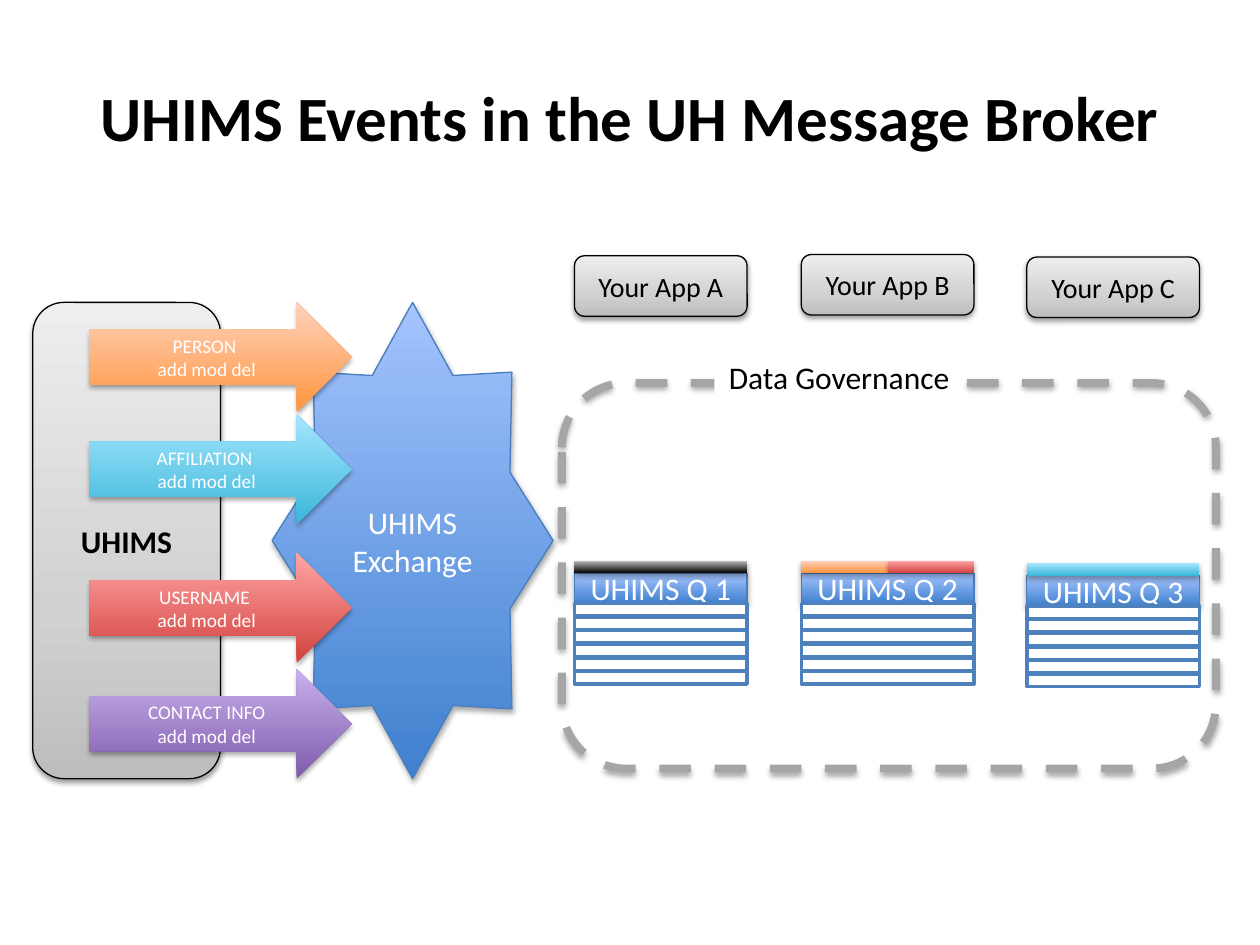
from dataclasses import dataclass

from pptx import Presentation
from pptx.dml.color import RGBColor
from pptx.enum.dml import MSO_LINE
from pptx.enum.shapes import MSO_SHAPE
from pptx.enum.text import MSO_ANCHOR, MSO_AUTO_SIZE, PP_ALIGN
from pptx.oxml import parse_xml
from pptx.oxml.ns import nsdecls, qn
from pptx.util import Inches, Pt

RECT, ROUND = MSO_SHAPE.RECTANGLE, MSO_SHAPE.ROUNDED_RECTANGLE
STAR, ARROW = MSO_SHAPE.STAR_8_POINT, MSO_SHAPE.RIGHT_ARROW
DASH = MSO_LINE.DASH
MIDDLE, TOP = MSO_ANCHOR.MIDDLE, MSO_ANCHOR.TOP
CENTER = PP_ALIGN.CENTER
GROW = MSO_AUTO_SIZE.SHAPE_TO_FIT_TEXT

Stops = tuple[tuple[int, str], ...]
Box = tuple[float, float, float, float]


@dataclass(frozen=True)
class Theme:
    font: str = "Calibri"
    black: str = "000000"
    white: str = "FFFFFF"
    edge: str = "4B7EBC"
    row: str = "4F81BD"
    dash: str = "A6A6A6"
    blue: Stops = ((0, "3F80CE"), (100, "A4C4FF"))
    gray: Stops = ((0, "BDBDBD"), (35, "D1D1D1"), (100, "EEEEEE"))
    dark: Stops = ((0, "000000"), (100, "BDBDBD"))
    orange: Stops = ((0, "FF953E"), (100, "FFD2BD"))
    aqua: Stops = ((0, "39B7D8"), (100, "A7E6FF"))
    red: Stops = ((0, "D1403C"), (100, "FFA6A5"))
    violet: Stops = ((0, "7F5BAB"), (100, "C8B0ED"))
    title: int = 36
    body: int = 18
    app: int = 16
    event: int = 11


@dataclass(frozen=True)
class Event:
    name: str
    top: float
    fill: Stops


@dataclass(frozen=True)
class App:
    name: str
    queue: str
    left: float
    top: float
    head: float
    bands: tuple[Stops, ...]


T = Theme()
EVENTS = (
    Event("PERSON ", 2.4, T.orange),
    Event("AFFILIATION ", 3.29, T.aqua),
    Event("USERNAME ", 4.39, T.red),
    Event("CONTACT INFO", 5.31, T.violet),
)
APPS = (
    App("Your App B", "UHIMS Q 2", 6.36, 2.02, 4.55, (T.orange, T.red)),
    App("Your App A", "UHIMS Q 1", 4.56, 2.03, 4.55, (T.dark,)),
    App("Your App C", "UHIMS Q 3", 8.15, 2.04, 4.57, (T.aqua,)),
)
WIDE, THIN, HEAD = 1.37, 0.1, 0.24
ROWS, STEP = 6, 0.54 / 5


def shade(shape, alpha: int = 35, dist: float = 1.8) -> None:
    """Add a soft shadow that falls straight down."""
    shape.shadow.inherit = False
    effects = shape._element.spPr.find(qn("a:effectLst"))
    effects.append(parse_xml(
        f'<a:outerShdw {nsdecls("a")} blurRad="{Pt(3.1)}" dist="{Pt(dist)}" '
        f'dir="5400000" rotWithShape="0"><a:srgbClr val="{T.black}">'
        f'<a:alpha val="{alpha * 1000}"/></a:srgbClr></a:outerShdw>'))


def blend(shape, stops: Stops) -> None:
    """Fill from bottom to top with the given colour stops."""
    shape.fill.gradient()
    shape.fill.gradient_angle = 90
    marks = shape._element.spPr.find(qn("a:gradFill")).find(qn("a:gsLst"))
    for old in list(marks):
        marks.remove(old)
    for place, color in stops:
        marks.append(parse_xml(
            f'<a:gs {nsdecls("a")} pos="{place * 1000}">'
            f'<a:srgbClr val="{color}"/></a:gs>'))


def draw(shapes, kind, box: Box, fill: Stops | str | None = None,
         line: str | None = None, width: float = 0.75):
    shape = shapes.add_shape(kind, *map(Inches, box))
    shape.shadow.inherit = False
    if fill is None:
        shape.fill.background()
    elif isinstance(fill, str):
        shape.fill.solid()
        shape.fill.fore_color.rgb = RGBColor.from_string(fill)
    else:
        blend(shape, fill)
    if line:
        shape.line.color.rgb = RGBColor.from_string(line)
        shape.line.width = Pt(width)
    else:
        shape.line.fill.background()
    return shape


def write(shape, lines: tuple[str, ...], size: int, color: str,
          bold: bool = False) -> None:
    frame = shape.text_frame
    frame.word_wrap = True
    frame.vertical_anchor = MIDDLE
    para = frame.paragraphs[0]
    para.alignment = CENTER
    for i, text in enumerate(lines):
        if i:
            para.add_line_break()
        run = para.add_run()
        run.text = text
        run.font.name = T.font
        run.font.size = Pt(size)
        run.font.bold = bold
        run.font.color.rgb = RGBColor.from_string(color)


def panel(shapes, box: Box, text: str, size: int, bold: bool = False) -> None:
    shape = draw(shapes, ROUND, box, T.gray, T.black)
    shade(shape, 38, 1.6)
    write(shape, (text,), size, T.black, bold)


def column(slide, app: App) -> None:
    """Draw an app with its queue: head, rows and colour bands."""
    shapes = slide.shapes.add_group_shape().shapes
    panel(shapes, (app.left, app.top, WIDE, 0.48), app.name, T.app)
    head = draw(shapes, RECT, (app.left, app.head, WIDE, HEAD), T.blue, T.edge)
    shade(head)
    write(head, (app.queue,), T.body, T.white)
    for i in range(ROWS):
        top = app.head + HEAD + i * STEP
        draw(shapes, RECT, (app.left, top, WIDE, THIN), T.white, T.row, 2)
    part = WIDE / len(app.bands)
    for i, fill in enumerate(app.bands):
        box = (app.left + i * part, app.head - THIN, part, THIN)
        shade(draw(shapes, RECT, box, fill))


def arrow(slide, event: Event) -> None:
    shape = draw(slide.shapes, ARROW, (0.71, event.top, 2.08, 0.87), event.fill)
    shade(shape)
    write(shape, (event.name, "add mod del"), T.event, T.white)


def border(slide) -> None:
    shapes = slide.shapes.add_group_shape().shapes
    frame = draw(shapes, ROUND, (4.46, 3.04, 5.19, 3.06), None, T.dash, 4.5)
    frame.line.dash_style = DASH
    shade(frame)
    label = draw(shapes, RECT, (5.67, 2.79, 1.98, 0.4), T.white)
    write(label, ("Data Governance",), T.body, T.black)
    label.text_frame.word_wrap = False
    label.text_frame.vertical_anchor = TOP
    label.text_frame.auto_size = GROW


def main() -> None:
    deck = Presentation()
    deck.slide_width, deck.slide_height = Inches(10), Inches(7.5)
    slide = deck.slides.add_slide(deck.slide_layouts[5])
    title = slide.shapes.title
    title.left, title.top = Inches(0.5), Inches(0.3)
    title.width, title.height = Inches(9), Inches(1.25)
    write(title, ("UHIMS Events in the UH Message Broker",),
          T.title, T.black, True)
    star = draw(slide.shapes, STAR, (2.16, 2.4, 2.23, 3.78), T.blue, T.edge)
    shade(star)
    write(star, ("UHIMS Exchange",), T.body, T.white)
    panel(slide.shapes, (0.26, 2.4, 1.49, 3.78), "UHIMS", T.body, True)
    for app in APPS:
        column(slide, app)
    for event in EVENTS:
        arrow(slide, event)
    border(slide)
    deck.save("out.pptx")


if __name__ == "__main__":
    main()
